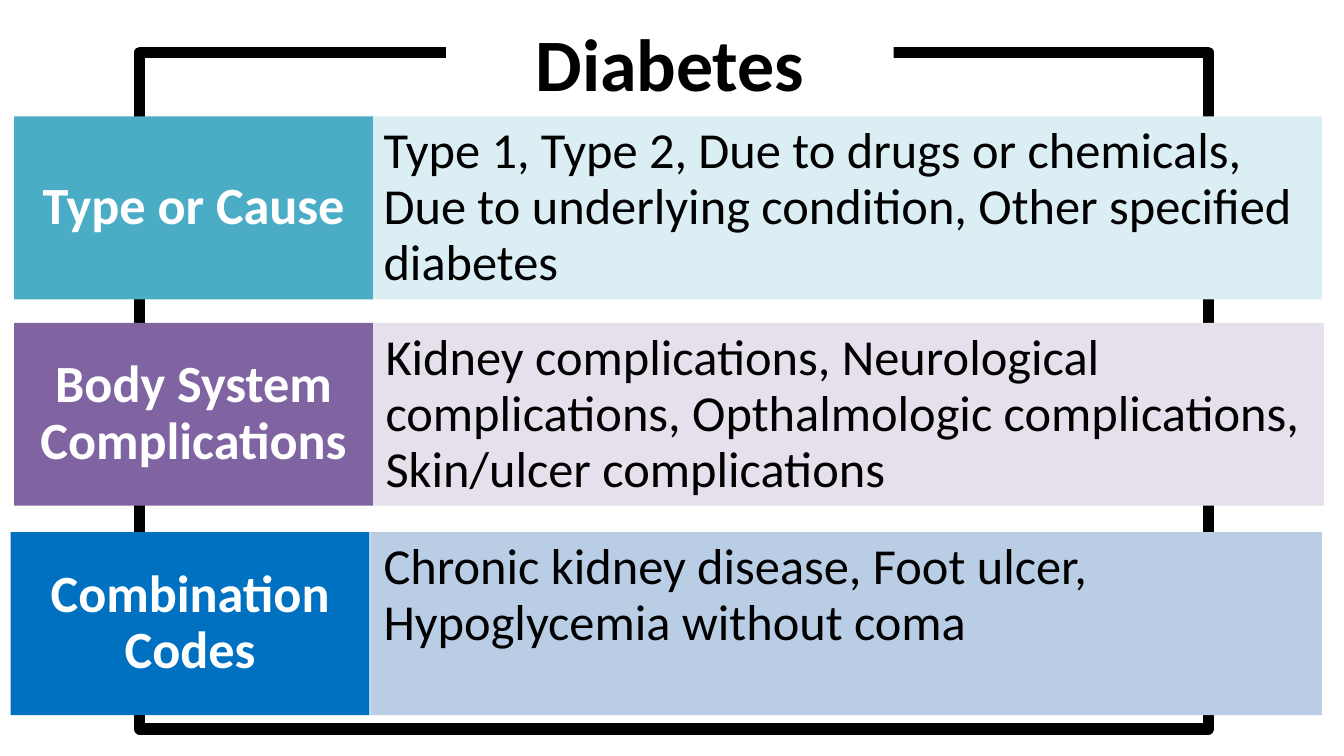
from dataclasses import dataclass

from pptx import Presentation
from pptx.dml.color import RGBColor
from pptx.enum.shapes import MSO_SHAPE
from pptx.enum.text import MSO_ANCHOR, PP_ALIGN
from pptx.util import Inches, Pt

RECT = MSO_SHAPE.RECTANGLE
TOP, MIDDLE = MSO_ANCHOR.TOP, MSO_ANCHOR.MIDDLE
LEFT, CENTER = PP_ALIGN.LEFT, PP_ALIGN.CENTER

BLACK = RGBColor(0x00, 0x00, 0x00)
WHITE = RGBColor(0xFF, 0xFF, 0xFF)
TEAL = RGBColor(0x4B, 0xAC, 0xC6)
PALE_TEAL = RGBColor(0xDB, 0xEE, 0xF4)
PURPLE = RGBColor(0x80, 0x64, 0xA2)
PALE_PURPLE = RGBColor(0xE6, 0xE0, 0xEC)
BLUE = RGBColor(0x00, 0x70, 0xC0)
PALE_BLUE = RGBColor(0xB9, 0xCD, 0xE5)

FONT = "Calibri"
WIDTH = Inches(10)
HEIGHT = WIDTH * 9 // 16

# Shares of the slide's size, in percent
LABEL_W, DETAIL_W, ROW_H = 26.7, 70.8, 24.2


@dataclass
class Box:
    x: float
    y: float
    w: float
    h: float


@dataclass
class Row:
    label: str
    detail: str
    label_x: float
    detail_x: float
    y: float
    dark: RGBColor
    pale: RGBColor


@dataclass
class TextStyle:
    size: float
    color: RGBColor
    bold: bool = True
    align: PP_ALIGN = CENTER
    anchor: MSO_ANCHOR = MIDDLE
    spacing: float | Pt = 1.0
    inset_x: float = 0.1
    inset_y: float = 0.05


TITLE = TextStyle(39.6, BLACK)
LABEL = TextStyle(28, WHITE, spacing=0.9, inset_x=0.16, inset_y=0.09)
DETAIL = TextStyle(27, BLACK, bold=False, align=LEFT, anchor=TOP, spacing=Pt(30))

ROWS = [
    Row("Type or Cause",
        "Type 1, Type 2, Due to drugs or chemicals, Due to underlying condition, "
        "Other specified diabetes",
        1.05, 27.55, 15.4, TEAL, PALE_TEAL),
    Row("Body System Complications",
        "Kidney complications, Neurological complications, "
        "Opthalmologic complications, Skin/ulcer complications",
        1.05, 27.7, 42.7, PURPLE, PALE_PURPLE),
    Row("Combination Codes",
        "Chronic kidney disease, Foot ulcer, Hypoglycemia without coma",
        0.8, 27.55, 70.4, BLUE, PALE_BLUE),
]


def add_rect(slide, box: Box):
    s = slide.shapes.add_shape(
        RECT, int(WIDTH * box.x / 100), int(HEIGHT * box.y / 100),
        int(WIDTH * box.w / 100), int(HEIGHT * box.h / 100))
    s.shadow.inherit = False
    return s


def add_panel(slide, box: Box, fill: RGBColor, text: str, style: TextStyle) -> None:
    s = add_rect(slide, box)
    s.fill.solid()
    s.fill.fore_color.rgb = fill
    s.line.fill.background()
    tf = s.text_frame
    tf.word_wrap = True
    tf.vertical_anchor = style.anchor
    tf.margin_left = tf.margin_right = Inches(style.inset_x)
    tf.margin_top = tf.margin_bottom = Inches(style.inset_y)
    tf.text = text
    p = tf.paragraphs[0]
    p.alignment = style.align
    p.line_spacing = style.spacing
    font = p.runs[0].font
    font.name, font.size, font.bold = FONT, Pt(style.size), style.bold
    font.color.rgb = style.color


def add_frame(slide, box: Box) -> None:
    s = add_rect(slide, box)
    s.fill.background()
    s.line.color.rgb = BLACK
    s.line.width = Pt(6)


def add_row(slide, row: Row) -> None:
    add_panel(slide, Box(row.detail_x, row.y, DETAIL_W, ROW_H), row.pale, row.detail, DETAIL)
    add_panel(slide, Box(row.label_x, row.y, LABEL_W, ROW_H), row.dark, row.label, LABEL)


def main() -> None:
    prs = Presentation()
    prs.slide_width, prs.slide_height = WIDTH, HEIGHT
    slide = prs.slides.add_slide(prs.slide_layouts[6])

    # Outline behind the rows
    add_frame(slide, Box(10.4, 6.93, 79.5, 89.5))

    # Label and detail rows, bottom one at the back
    for row in reversed(ROWS):
        add_row(slide, row)

    # Title breaking the outline's top edge
    add_panel(slide, Box(33.2, 2.1, 33.3, 12.2), WHITE, "Diabetes", TITLE)

    prs.save("out.pptx")


if __name__ == "__main__":
    main()
